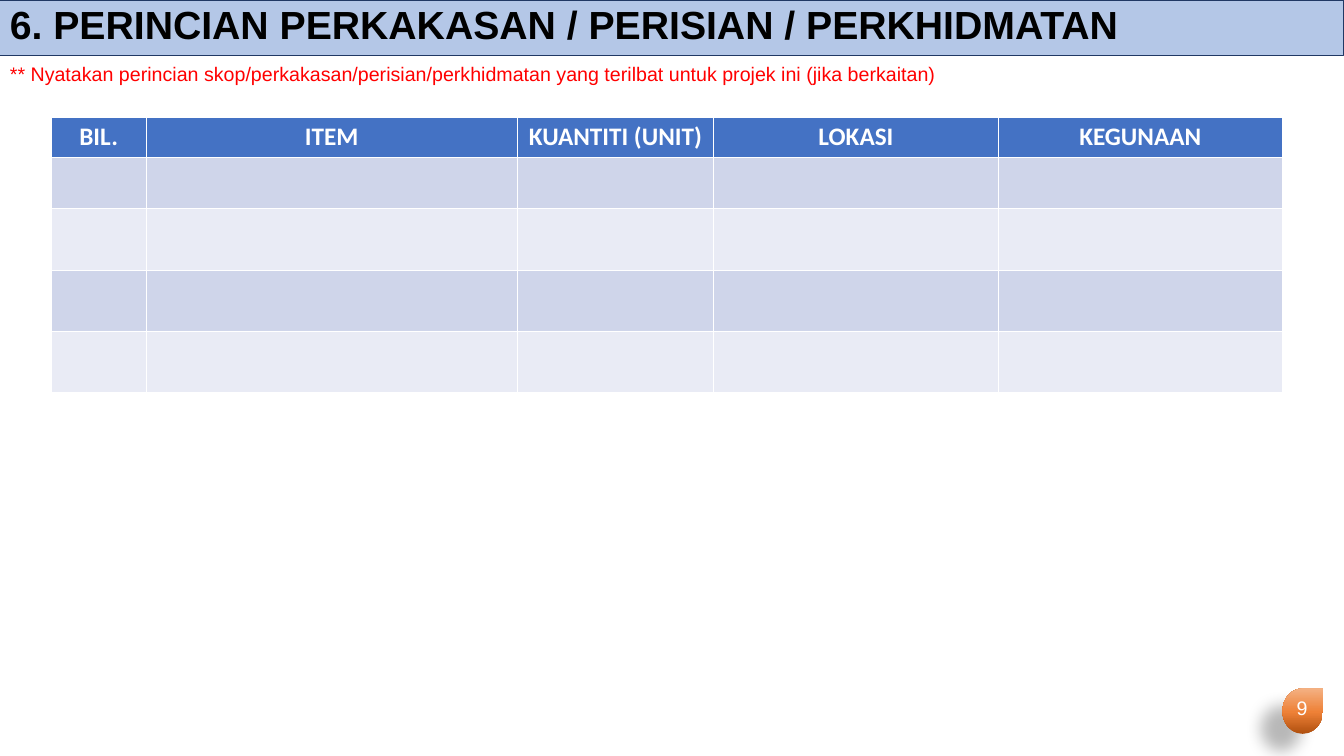
from dataclasses import dataclass

from lxml import etree
from pptx import Presentation
from pptx.dml.color import RGBColor
from pptx.enum.shapes import MSO_SHAPE
from pptx.enum.text import MSO_ANCHOR, PP_ALIGN
from pptx.oxml.ns import qn
from pptx.util import Inches, Pt

RECTANGLE, TEARDROP = MSO_SHAPE.RECTANGLE, MSO_SHAPE.TEAR
LEFT, CENTER = PP_ALIGN.LEFT, PP_ALIGN.CENTER
MIDDLE = MSO_ANCHOR.MIDDLE

WHITE, BLACK, RED = "FFFFFF", "000000", "FF0000"
HEADER_FILL = "4472C4"
BAND_FILLS = ("CFD5EA", "E9EBF5")
BADGE_STOPS = ((0, "B0500F"), (48, "EE8137"), (100, "F4B183"))
ROW_HEIGHTS = (0.39, 0.51, 0.61, 0.61, 0.61)


@dataclass(frozen=True)
class Column:
    heading: str
    width: float


@dataclass(frozen=True)
class Style:
    size: float
    color: str
    font: str = "Arial"
    bold: bool = False
    align: PP_ALIGN = LEFT


COLUMNS = (
    Column("BIL.", 0.94),
    Column("ITEM", 3.68),
    Column("KUANTITI (UNIT)", 1.95),
    Column("LOKASI", 2.82),
    Column("KEGUNAAN", 2.82),
)
TITLE = Style(28, BLACK, bold=True)
NOTE = Style(14, RED)
NUMBER = Style(14, WHITE, align=CENTER)
HEADING = Style(18, WHITE, font="Calibri", bold=True, align=CENTER)


def rgb(color: str) -> RGBColor:
    return RGBColor.from_string(color)


def write(frame, text: str, style: Style) -> None:
    frame.text = text
    para = frame.paragraphs[0]
    para.alignment = style.align
    font = para.runs[0].font
    font.name, font.size, font.bold = style.font, Pt(style.size), style.bold
    font.color.rgb = rgb(style.color)


def add_shape(page, kind: MSO_SHAPE, left: float, top: float, width: float, height: float):
    shape = page.shapes.add_shape(kind, Inches(left), Inches(top), Inches(width), Inches(height))
    shape.shadow.inherit = False
    return shape


def add_text(page, left: float, top: float, width: float, height: float,
             text: str, style: Style) -> None:
    box = page.shapes.add_textbox(Inches(left), Inches(top), Inches(width), Inches(height))
    box.text_frame.word_wrap = True
    write(box.text_frame, text, style)


def add_color(parent, color: str):
    return etree.SubElement(parent, qn("a:srgbClr"), val=color)


def add_title_bar(page) -> None:
    bar = add_shape(page, RECTANGLE, 0, 0, 13.33, 0.55)
    bar.fill.solid()
    bar.fill.fore_color.rgb = rgb("B4C7E7")
    bar.line.color.rgb = rgb("203864")
    bar.line.width = Pt(0.75)
    frame = bar.text_frame
    frame.vertical_anchor = MIDDLE
    write(frame, "6. PERINCIAN PERKAKASAN / PERISIAN / PERKHIDMATAN", TITLE)
    frame.paragraphs[0].line_spacing = 0.85


def add_badge(page) -> None:
    """Draw the page number on a shaded teardrop with a soft shadow."""
    badge = add_shape(page, TEARDROP, 12.72, 6.83, 0.4, 0.45)
    badge.line.fill.background()
    badge.fill.gradient()
    badge.fill.gradient_angle = 90
    properties = badge.element.spPr
    stops = properties.find(".//" + qn("a:gsLst"))
    stops.clear()
    for position, color in BADGE_STOPS:
        add_color(etree.SubElement(stops, qn("a:gs"), pos=str(position * 1000)), color)
    shadow = etree.SubElement(
        properties.find(qn("a:effectLst")), qn("a:outerShdw"),
        blurRad=str(Pt(11.8)), dist=str(Pt(19.7)), dir=str(141 * 60000), rotWithShape="0")
    etree.SubElement(add_color(shadow, BLACK), qn("a:alpha"), val="28000")
    add_text(page, 12.67, 6.86, 0.49, 0.4, "9", NUMBER)


def add_item_table(page) -> None:
    width = sum(column.width for column in COLUMNS)
    table = page.shapes.add_table(
        len(ROW_HEIGHTS), len(COLUMNS), Inches(0.51), Inches(1.16),
        Inches(width), Inches(sum(ROW_HEIGHTS))).table
    for row, height in zip(table.rows, ROW_HEIGHTS):
        row.height = Inches(height)
    for index, column in enumerate(COLUMNS):
        table.columns[index].width = Inches(column.width)
        write(table.cell(0, index).text_frame, column.heading, HEADING)
    for index, row in enumerate(table.rows):
        color = BAND_FILLS[(index - 1) % 2] if index else HEADER_FILL
        for cell in row.cells:
            cell.fill.solid()
            cell.fill.fore_color.rgb = rgb(color)


def main() -> None:
    deck = Presentation()
    deck.slide_width, deck.slide_height = Inches(13.33), Inches(7.5)
    page = deck.slides.add_slide(deck.slide_layouts[6])
    add_badge(page)
    add_title_bar(page)
    add_text(page, 0, 0.57, 13.33, 0.34,
             "** Nyatakan perincian skop/perkakasan/perisian/perkhidmatan yang terilbat "
             "untuk projek ini (jika berkaitan)", NOTE)
    add_item_table(page)
    deck.save("out.pptx")


if __name__ == "__main__":
    main()
